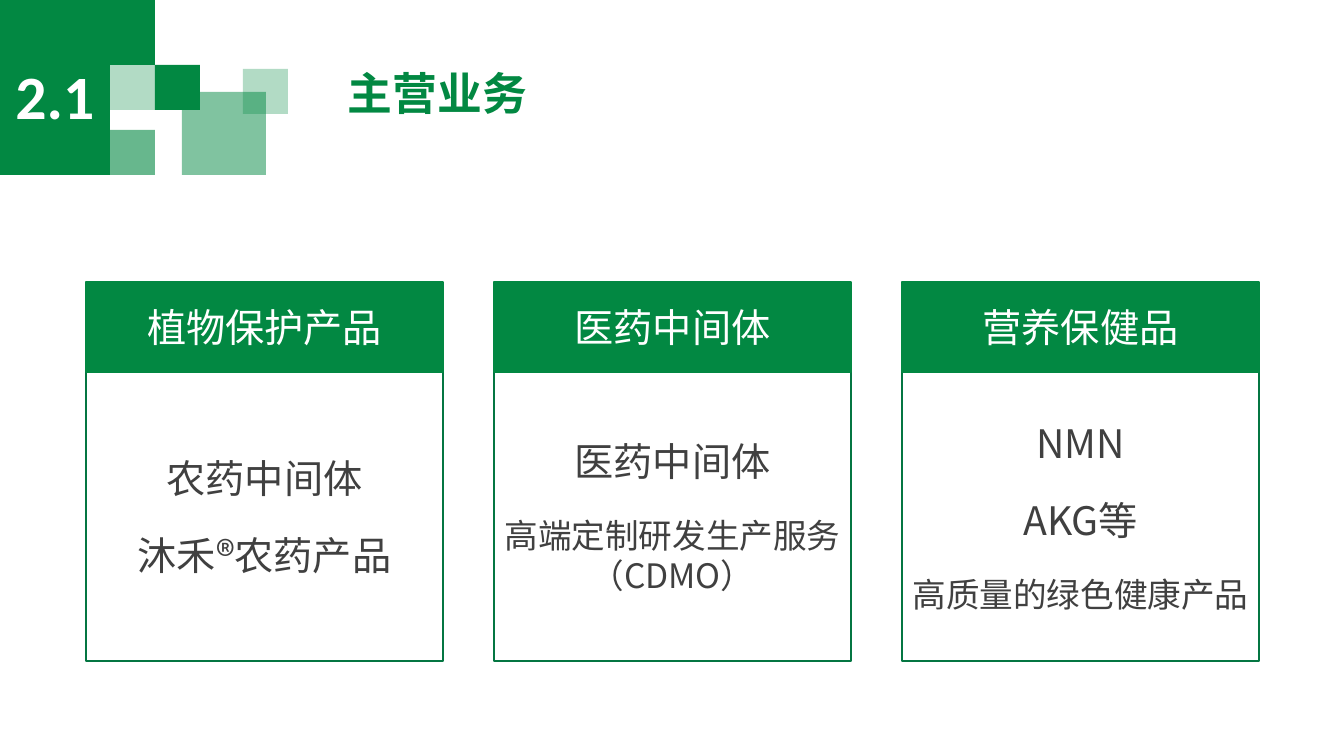
from lxml import etree
from pptx import Presentation
from pptx.dml.color import RGBColor
from pptx.enum.shapes import MSO_SHAPE
from pptx.enum.text import MSO_ANCHOR, PP_ALIGN
from pptx.oxml.ns import qn
from pptx.util import Pt

RECT = MSO_SHAPE.RECTANGLE
MIDDLE = MSO_ANCHOR.MIDDLE
LEFT, CENTER = PP_ALIGN.LEFT, PP_ALIGN.CENTER
EMU_PER_PX = 914400 / 100.8
COLORS = {"green": "028842", "border": "047642", "body": "404040", "white": "FFFFFF"}
CJK, LATIN = "Noto Sans CJK SC", "Calibri"


class SlideBuilder:
    """Draws styled elements on one slide, with lengths in px."""

    def __init__(self, deck):
        deck.slide_width, deck.slide_height = self.px(1344), self.px(756)
        self.slide = deck.slides.add_slide(deck.slide_layouts[6])

    def px(self, length):
        return round(length * EMU_PER_PX)

    def color(self, name):
        return RGBColor.from_string(COLORS[name])

    def box(self, left, top, width, height, fill=None, line=None, opacity=100):
        shape = self.slide.shapes.add_shape(RECT, *map(self.px, (left, top, width, height)))
        shape.shadow.inherit = False
        if fill:
            shape.fill.solid()
            shape.fill.fore_color.rgb = self.color(fill)
            if opacity < 100:
                tint = shape.fill._xPr.find(qn("a:solidFill"))[0]
                etree.SubElement(tint, qn("a:alpha"), val=str(opacity * 1000))
        else:
            shape.fill.background()
        if line:
            shape.line.color.rgb = self.color(line)
            shape.line.width = Pt(1)
        else:
            shape.line.fill.background()
        return shape

    def text(self, shape, lines, color, font=CJK, bold=False, align=CENTER, gap=0, spacing=None):
        frame = shape.text_frame
        frame.word_wrap = True
        frame.vertical_anchor = MIDDLE
        for index, (wording, size) in enumerate(lines):
            paragraph = frame.add_paragraph() if index else frame.paragraphs[0]
            paragraph.alignment = align
            if spacing:
                paragraph.line_spacing = spacing
            if index:
                paragraph.space_before = Pt(gap)
            run = paragraph.add_run()
            run.text = wording
            run.font.size = Pt(size)
            run.font.bold = bold
            run.font.name = font
            run.font.color.rgb = self.color(color)
            etree.SubElement(run.font._element, qn("a:ea"), typeface=CJK)

    def title(self, wording, left, top, width, height):
        heading = self.slide.shapes.add_textbox(*map(self.px, (left, top, width, height)))
        self.text(heading, [(wording, 32)], "green", bold=True, align=LEFT, spacing=0.9)

    def card(self, left, heading, lines):
        content = self.box(left, 372, 357, 289, line="border")
        self.text(content, lines, "body", gap=21.5)
        header = self.box(left, 282, 357, 90, fill="green", line="green")
        self.text(header, [(heading, 28)], "white", font=LATIN)


MOSAIC = [
    (0, 65, 110, 110, 100),
    (0, 0, 155, 65, 100),
    (110, 65, 45, 45, 30),
    (155, 65, 45, 45, 100),
    (110, 130, 45, 45, 60),
    (182, 92, 84, 83, 50),
    (243, 69, 45, 45, 30),
]
BUSINESSES = [
    ("植物保护产品", [("农药中间体", 28), ("沐禾®农药产品", 28)]),
    ("医药中间体", [("医药中间体", 28), ("高端定制研发生产服务（CDMO）", 24)]),
    ("营养保健品", [("NMN", 28), ("AKG等", 28), ("高质量的绿色健康产品", 24)]),
]


def main():
    deck = Presentation()
    builder = SlideBuilder(deck)
    for *place, opacity in MOSAIC:
        builder.box(*place, fill="green", opacity=opacity)
    section = builder.box(0, 40, 110, 110, fill="green")
    builder.text(section, [("2.1", 44)], "white", font=LATIN, bold=True)
    builder.title("主营业务", 338, 66, 382, 60)
    for column, (heading, lines) in enumerate(BUSINESSES):
        builder.card(86 + 408 * column, heading, lines)
    deck.save("out.pptx")


if __name__ == "__main__":
    main()
